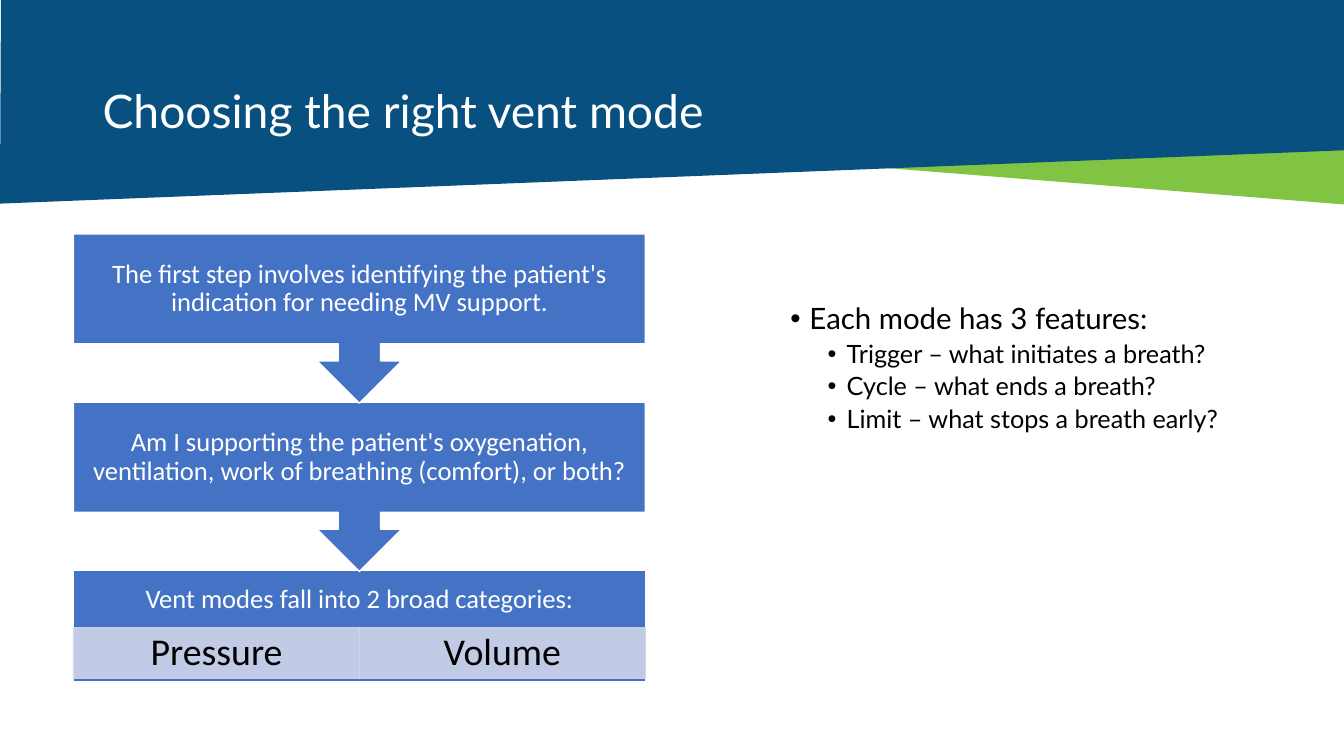
"""Build the slide on choosing the right ventilator mode."""
from lxml.etree import SubElement
from pptx import Presentation
from pptx.dml.color import RGBColor
from pptx.enum.shapes import MSO_SHAPE
from pptx.enum.text import MSO_ANCHOR, PP_ALIGN
from pptx.oxml.ns import qn
from pptx.util import Inches, Pt

NAVY = RGBColor(0x07, 0x50, 0x80)
GREEN = RGBColor(0x81, 0xC3, 0x42)
BLUE = RGBColor(0x44, 0x72, 0xC4)
PALE_BLUE = RGBColor(0xCF, 0xD5, 0xEA)
WHITE = RGBColor(0xFF, 0xFF, 0xFF)
BLACK = RGBColor(0x00, 0x00, 0x00)


def paint(shape, fill, line=None):
    shape.shadow.inherit = False
    shape.fill.solid()
    shape.fill.fore_color.rgb = fill
    if line is None:
        shape.line.fill.background()
    else:
        shape.line.color.rgb = line
        shape.line.width = Pt(1)


def write(paragraph, text, font, size, color, align=PP_ALIGN.LEFT):
    paragraph.alignment = align
    paragraph.line_spacing = 0.9
    run = paragraph.add_run()
    run.text = text
    run.font.name = font
    run.font.size = Pt(size)
    run.font.color.rgb = color


presentation = Presentation()
presentation.slide_width = Inches(13.33)
presentation.slide_height = Inches(7.5)
slide = presentation.slides.add_slide(presentation.slide_layouts[6])
shapes = slide.shapes

wedge = shapes.add_shape(MSO_SHAPE.RIGHT_TRIANGLE, Inches(6.32), Inches(1.47), Inches(7.03), Inches(0.56))
wedge.rotation = 180
paint(wedge, GREEN)

builder = shapes.build_freeform(Inches(0), Inches(2.02))
band_corners = [(13.36, 1.49), (13.35, 0), (0.01, 0)]
builder.add_line_segments([(Inches(x), Inches(y)) for x, y in band_corners], close=True)
paint(builder.convert_to_shape(), NAVY)

title = shapes.add_textbox(Inches(0.92), Inches(0.4), Inches(11.5), Inches(1.45))
title.text_frame.word_wrap = True
title.text_frame.vertical_anchor = MSO_ANCHOR.MIDDLE
write(title.text_frame.paragraphs[0], "Choosing the right vent mode", "Lato", 33, WHITE)

flow_left, flow_top, flow_width, step_pitch = 0.73, 2.32, 5.67, 1.67
steps = [
    (MSO_SHAPE.DOWN_ARROW_CALLOUT, 1.68, 0.15, "The first step involves identifying the patient's indication for needing MV support."),
    (MSO_SHAPE.DOWN_ARROW_CALLOUT, 1.68, 0.15, "Am I supporting the patient's oxygenation, ventilation, work of breathing (comfort), or both?"),
    (MSO_SHAPE.RECTANGLE, 1.1, 0.66, "Vent modes\u00a0fall into 2 broad categories:"),
]
for index, (kind, height, bottom_inset, text) in reversed(list(enumerate(steps))):
    step = shapes.add_shape(
        kind, Inches(flow_left), Inches(flow_top + index * step_pitch), Inches(flow_width), Inches(height)
    )
    paint(step, BLUE, WHITE)
    frame = step.text_frame
    frame.word_wrap = True
    frame.vertical_anchor = MSO_ANCHOR.MIDDLE
    frame.margin_left = frame.margin_right = frame.margin_top = Inches(0.15)
    frame.margin_bottom = Inches(bottom_inset)
    write(frame.paragraphs[0], text, "Calibri", 19, WHITE, PP_ALIGN.CENTER)

category_width = flow_width / 2
for index, text in enumerate(["Pressure", "Volume"]):
    category = shapes.add_shape(
        MSO_SHAPE.RECTANGLE, Inches(flow_left + index * category_width), Inches(6.23),
        Inches(category_width), Inches(0.5)
    )
    paint(category, PALE_BLUE, PALE_BLUE)
    for color in category._element.spPr.iter(qn("a:srgbClr")):
        SubElement(color, qn("a:alpha"), val="90000")
    frame = category.text_frame
    frame.word_wrap = True
    frame.vertical_anchor = MSO_ANCHOR.MIDDLE
    frame.margin_left = frame.margin_right = Inches(0.21)
    frame.margin_top = frame.margin_bottom = Inches(0.04)
    write(frame.paragraphs[0], text, "Calibri", 27, BLACK, PP_ALIGN.CENTER)

features = [
    (0, "Each mode has 3 features:"),
    (1, "Trigger – what initiates a breath?"),
    (1, "Cycle – what ends a breath?"),
    (1, "Limit – what stops a breath early?"),
]
level_styles = [(0.19, 21, 7.5), (0.56, 18, 3.8)]
body = shapes.add_textbox(Inches(7.74), Inches(2.97), Inches(5.07), Inches(1.73))
body.text_frame.word_wrap = True
for index, (level, text) in enumerate(features):
    indent, size, space_before = level_styles[level]
    paragraph = body.text_frame.paragraphs[0] if index == 0 else body.text_frame.add_paragraph()
    paragraph.level = level
    write(paragraph, text, "Lato", size, BLACK)
    paragraph.space_before = Pt(space_before)
    properties = paragraph._p.get_or_add_pPr()
    properties.set("marL", str(Inches(indent)))
    properties.set("indent", str(Inches(-0.19)))
    SubElement(properties, qn("a:buFont"), typeface="Arial")
    SubElement(properties, qn("a:buChar"), char="•")

presentation.save("out.pptx")
